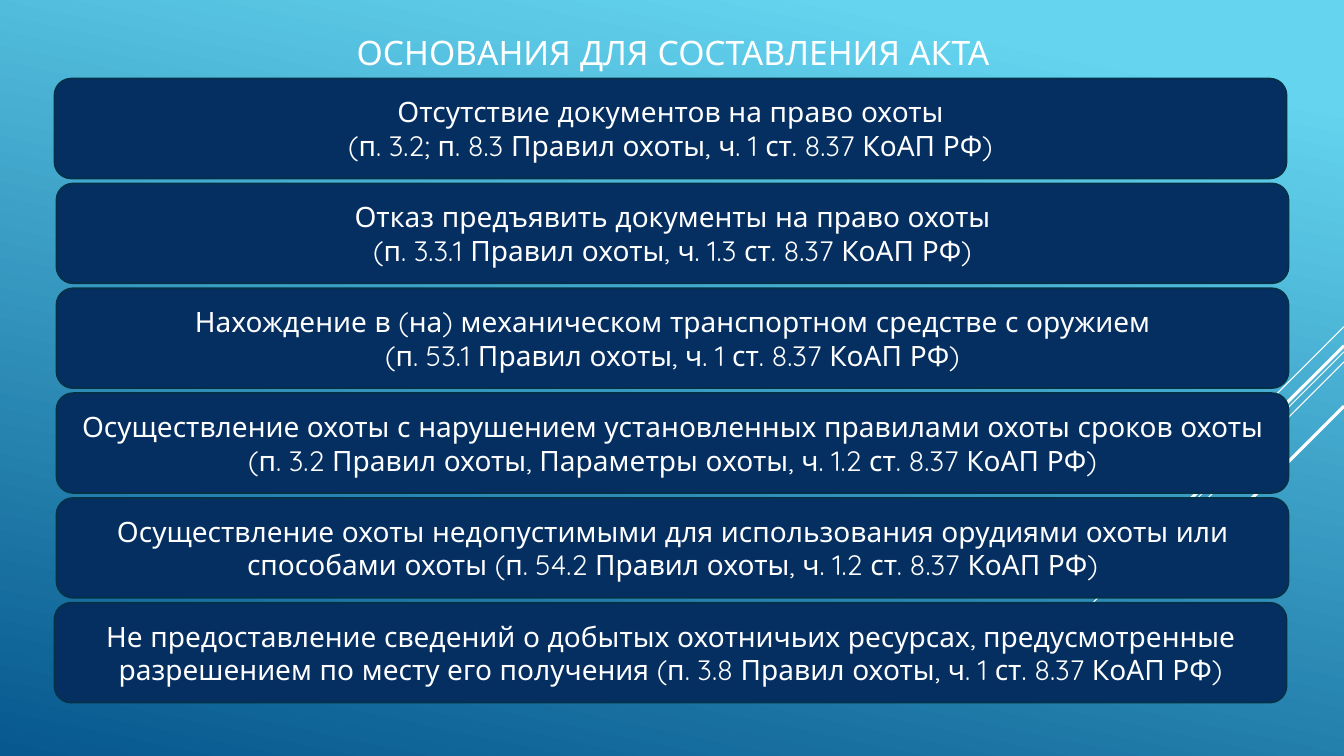
from lxml.etree import SubElement
from pptx import Presentation
from pptx.dml.color import RGBColor
from pptx.enum.shapes import MSO_CONNECTOR as Connector, MSO_SHAPE as Shape
from pptx.enum.text import MSO_ANCHOR as Anchor, PP_ALIGN as Align
from pptx.oxml.ns import qn
from pptx.util import Inches, Pt

COLORS = {
    "sky": "64D4EF",
    "deep": "06588E",
    "navy": "052F61",
    "edge": "043148",
    "white": "FFFFFF",
}
SLIDE_WIDTH, SLIDE_HEIGHT = 13.33, 7.5
FIRST_TOP, ROW_PITCH, ROW_WIDTH, ROW_HEIGHT = 0.78, 1.04, 12.22, 0.99

DIAGONALS = [
    (3.24, 1, 0.75),
    (3.49, 3.26, 0.75),
    (3.59, 2.07, 0.75),
    (3.43, 1.91, 2.25),
    (4.03, 1.39, 2.25),
]
GROUNDS = [
    (0.54, ["Отсутствие документов на право охоты",
            "(п. 3.2; п. 8.3 Правил охоты, ч. 1 ст. 8.37 КоАП РФ)"]),
    (0.56, ["Отказ предъявить документы на право охоты",
            "(п. 3.3.1 Правил охоты, ч. 1.3 ст. 8.37 КоАП РФ)"]),
    (0.56, ["Нахождение в (на) механическом транспортном средстве с оружием",
            "(п. 53.1 Правил охоты, ч. 1 ст. 8.37 КоАП РФ)"]),
    (0.56, ["Осуществление охоты с нарушением установленных правилами охоты сроков охоты "
            "(п. 3.2 Правил охоты, Параметры охоты, ч. 1.2 ст. 8.37 КоАП РФ)"]),
    (0.56, ["Осуществление охоты недопустимыми для использования орудиями охоты или "
            "способами охоты (п. 54.2 Правил охоты, ч. 1.2 ст. 8.37 КоАП РФ)"]),
    (0.54, ["Не предоставление сведений о добытых охотничьих ресурсах, предусмотренные "
            "разрешением по месту его получения (п. 3.8 Правил охоты, ч. 1 ст. 8.37 КоАП РФ)"]),
]


class SlideBuilder:
    """Holds the slide and its style, and draws each kind of element."""

    font_name = "Quicksand"

    def __init__(self, slide):
        self.slide = slide

    def color(self, name):
        return RGBColor.from_string(COLORS[name])

    def background(self):
        fill = self.slide.background.fill
        fill.gradient()
        fill.gradient_angle = 258
        for stop, position, name in zip(fill.gradient_stops, (0.1, 1), ("sky", "deep")):
            stop.position = position
            stop.color.rgb = self.color(name)

    def diagonal(self, top, reach, weight):
        line = self.slide.shapes.add_connector(
            Connector.STRAIGHT, Inches(SLIDE_WIDTH), Inches(top),
            Inches(SLIDE_WIDTH - reach), Inches(top + reach))
        line.line.color.rgb = self.color("white")
        line.line.width = Pt(weight)
        SubElement(line.element.spPr, qn("a:effectLst"))

    def set_text(self, shape, texts, size):
        frame = shape.text_frame
        frame.word_wrap = True
        frame.text = "\n".join(texts)
        for paragraph in frame.paragraphs:
            paragraph.alignment = Align.CENTER
            paragraph.font.name = self.font_name
            paragraph.font.size = Pt(size)
            paragraph.font.color.rgb = self.color("white")

    def title(self, text):
        box = self.slide.shapes.add_textbox(
            Inches(0.25), Inches(0.27), Inches(12.85), Inches(0.51))
        self.set_text(box, [text], 24)

    def panel(self, left, top, texts):
        shape = self.slide.shapes.add_shape(
            Shape.ROUNDED_RECTANGLE, Inches(left), Inches(top),
            Inches(ROW_WIDTH), Inches(ROW_HEIGHT))
        shape.shadow.inherit = False
        shape.fill.solid()
        shape.fill.fore_color.rgb = self.color("navy")
        shape.line.color.rgb = self.color("edge")
        shape.line.width = Pt(1.25)
        shape.text_frame.vertical_anchor = Anchor.MIDDLE
        self.set_text(shape, texts, 20)


def main():
    presentation = Presentation()
    presentation.slide_width = Inches(SLIDE_WIDTH)
    presentation.slide_height = Inches(SLIDE_HEIGHT)
    builder = SlideBuilder(presentation.slides.add_slide(presentation.slide_layouts[6]))
    builder.background()
    for diagonal in DIAGONALS:
        builder.diagonal(*diagonal)
    builder.title("ОСНОВАНИЯ ДЛЯ СОСТАВЛЕНИЯ АКТА")
    for row, (left, texts) in enumerate(GROUNDS):
        builder.panel(left, FIRST_TOP + row * ROW_PITCH, texts)
    presentation.save("out.pptx")


if __name__ == "__main__":
    main()
